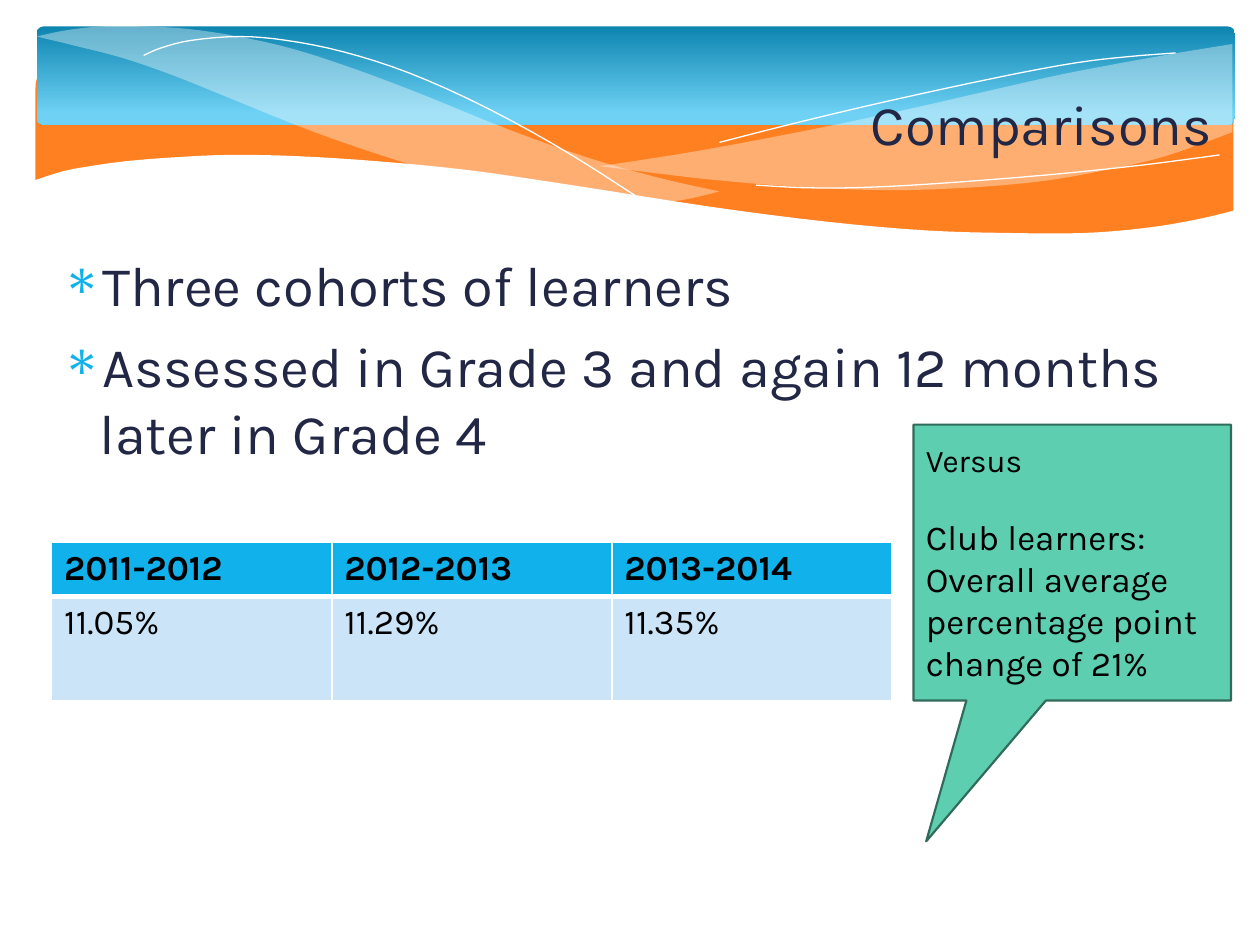
from dataclasses import dataclass
from typing import NamedTuple

from lxml import etree
from pptx import Presentation, util as u
from pptx.dml import color
from pptx.enum import shapes, text
from pptx.oxml import ns

Point = tuple[float, float]


@dataclass(frozen=True)
class Theme:
    font: str = "Karla"
    ink: str = "212745"
    black: str = "000000"
    white: str = "FFFFFF"
    orange: str = "FF8021"
    deep: str = "0D85B0"
    sky: str = "6FD2F5"
    blue: str = "11B2EB"
    pale: str = "CCE4F7"
    green: str = "5DCEAF"
    edge: str = "316B5B"
    large: int = 32
    mid: int = 20
    small: int = 18


class Box(NamedTuple):
    x: float
    y: float
    w: float
    h: float

    def emu(self) -> list[int]:
        return [u.Inches(n) for n in self]


class Wave(NamedTuple):
    curves: list[list[Point]]
    fill: bool = True
    alpha: int = 100


T = Theme()
ROUND = shapes.MSO_SHAPE.ROUNDED_RECTANGLE
WAVES = [
    Wave([[(9.78, .35), (9.35, .42), (8.9, .5), (8.43, .59), (7.94, .7),
           (7.06, .9), (6.23, 1.07), (5.47, 1.21), (4.76, 1.32)],
          [(4.76, 1.32), (5.24, 1.38), (5.68, 1.43), (6.29, 1.48), (7.03, 1.51),
           (7.68, 1.49), (8.26, 1.44), (8.78, 1.35), (9.25, 1.24), (9.78, 1.05)]],
         alpha=37),
    Wave([[(5.71, 1.52), (5.22, 1.41), (4.66, 1.25), (4.04, 1.03), (3.35, .75),
           (2.82, .55), (2.33, .39), (1.89, .29), (1.49, .23), (1.13, .21),
           (.81, .21), (.53, .24), (.29, .29)],
          [(.29, .29), (.62, .37), (.97, .46), (1.35, .59), (1.75, .75),
           (2.47, 1.04), (3.11, 1.26), (3.68, 1.43), (4.19, 1.54),
           (4.64, 1.6), (5.04, 1.61), (5.4, 1.59), (5.71, 1.52)]],
         alpha=37),
    Wave([[(1.14, .44), (1.28, .38), (1.52, .32), (1.9, .29), (2.27, .32),
           (2.72, .41), (3.25, .58), (3.87, .86), (4.57, 1.25), (5.37, 1.77)]],
         fill=False),
    Wave([[(5.71, 1.13), (6.3, .98), (7.06, .8), (7.94, .61), (8.53, .5),
           (8.95, .45), (9.33, .42)]], fill=False),
    Wave([[(9.88, 1.65), (9.51, 1.74), (9.09, 1.81), (8.6, 1.85), (8.03, 1.85),
           (7.36, 1.83), (6.56, 1.76), (5.63, 1.64), (4.54, 1.47), (3.71, 1.35),
           (2.99, 1.28), (2.36, 1.24), (1.82, 1.23), (1.37, 1.25), (1, 1.28),
           (.71, 1.32), (.5, 1.36), (.28, 1.43)],
          [(.28, 2.21), (9.88, 2.21)]]),
    Wave([[(9.68, 1.23), (9.07, 1.31), (8.3, 1.39), (7.4, 1.46), (6.8, 1.49),
           (6.37, 1.49), (6, 1.47)]], fill=False),
]


def rgb(code: str) -> color.RGBColor:
    return color.RGBColor.from_string(code)


def smooth(pts: list[Point], steps: int = 4) -> list[Point]:
    if len(pts) < 3:
        return pts
    ends = [pts[0], *pts, pts[-1]]
    out = []
    for a, b, c, d in zip(ends, ends[1:], ends[2:], ends[3:]):
        for i in range(steps):
            t = i / steps
            x, y = (
                (2 * q + (r - p) * t + (2 * p - 5 * q + 4 * r - s) * t ** 2
                 + (3 * q - p - 3 * r + s) * t ** 3) / 2
                for p, q, r, s in zip(a, b, c, d))
            out.append((x, y))
    return out + [pts[-1]]


def draw_wave(slide, wave: Wave) -> None:
    pts = [(u.Inches(x), u.Inches(y)) for curve in wave.curves for x, y in smooth(curve)]
    pen = slide.shapes.build_freeform(*pts[0], scale=1.0)
    pen.add_line_segments(pts[1:], close=wave.fill)
    shape = pen.convert_to_shape()
    shape.shadow.inherit = False
    if not wave.fill:
        shape.fill.background()
        shape.line.color.rgb = rgb(T.white)
        shape.line.width = u.Pt(0)
        return
    shape.fill.solid()
    shape.fill.fore_color.rgb = rgb(T.white)
    shape.line.fill.background()
    if wave.alpha < 100:
        tint = shape._element.spPr.find(ns.qn("a:solidFill"))[0]
        etree.SubElement(tint, ns.qn("a:alpha"), val=str(wave.alpha * 1000))


def add_shape(slide, kind, box: Box, fill: str, line: str):
    shape = slide.shapes.add_shape(kind, *box.emu())
    shape.shadow.inherit = False
    shape.fill.solid()
    shape.fill.fore_color.rgb = rgb(fill)
    shape.line.color.rgb = rgb(line)
    shape.line.width = u.Pt(1.25)
    return shape


def style(par, size: int, ink: str, bold: bool = False) -> None:
    for run in par.runs:
        run.font.name = T.font
        run.font.size = u.Pt(size)
        run.font.color.rgb = rgb(ink)
        run.font.bold = bold


def add_text(slide, box: Box, words: str):
    frame = slide.shapes.add_textbox(*box.emu()).text_frame
    frame.word_wrap = True
    frame.text = words
    for par in frame.paragraphs:
        style(par, T.large, T.ink)
    return frame


def add_bullet(par) -> None:
    props = par._p.get_or_add_pPr()
    props.set("marL", str(u.Inches(.3)))
    props.set("indent", str(-u.Inches(.3)))
    tint = etree.SubElement(props, ns.qn("a:buClr"))
    etree.SubElement(tint, ns.qn("a:srgbClr"), val=T.blue)
    etree.SubElement(props, ns.qn("a:buChar"), char="∗")


def set_edges(cell, base: float) -> None:
    props = cell._tc.get_or_add_tcPr()
    for i, (tag, width) in enumerate(dict(lnL=1, lnR=1, lnT=1, lnB=base).items()):
        edge = etree.Element(ns.qn("a:" + tag), w=str(u.Pt(width)))
        fill = etree.SubElement(edge, ns.qn("a:solidFill"))
        etree.SubElement(fill, ns.qn("a:srgbClr"), val=T.white)
        props.insert(i, edge)


def add_grid(slide, box: Box, rows: list[list[str]], highs: list[float]) -> None:
    grid = slide.shapes.add_table(len(rows), len(rows[0]), *box.emu()).table
    for r, row in enumerate(rows):
        grid.rows[r].height = u.Inches(highs[r])
        for c, words in enumerate(row):
            cell = grid.cell(r, c)
            cell.text = words
            style(cell.text_frame.paragraphs[0], T.mid, T.black, r == 0)
            cell.fill.solid()
            cell.fill.fore_color.rgb = rgb(T.pale if r else T.blue)
            set_edges(cell, 1 if r else 3)


def main() -> None:
    deck = Presentation()
    deck.slide_width, deck.slide_height = u.Inches(10), u.Inches(7.5)
    slide = deck.slides.add_slide(deck.slide_layouts[6])

    add_shape(slide, ROUND, Box(.29, .44, 9.49, 1.56), T.orange, T.orange)
    band = add_shape(slide, ROUND, Box(.29, .21, 9.51, .78), T.sky, T.sky)
    band.adjustments[0] = .07
    band.line.fill.background()
    band.fill.gradient()
    band.fill.gradient_angle = 270
    for stop, tint, place in zip(band.fill.gradient_stops, (T.deep, T.sky), (0, .9)):
        stop.color.rgb = rgb(tint)
        stop.position = place
    for wave in WAVES:
        draw_wave(slide, wave)

    body = add_text(slide, Box(.39, 1.94, 9.42, 5.29),
                    "Three cohorts of learners\n"
                    "Assessed in Grade 3 and again 12 months later in Grade 4")
    body.paragraphs[1].space_before = u.Pt(7.5)
    for par in body.paragraphs:
        add_bullet(par)
    title = add_text(slide, Box(1.14, .29, 8.58, 1.37), "Comparisons")
    title.vertical_anchor = text.MSO_ANCHOR.MIDDLE
    title.paragraphs[0].alignment = text.PP_ALIGN.RIGHT

    add_grid(slide, Box(.41, 4.3, 6.67, 1.24),
             [["2011-2012", "2012-2013", "2013-2014"],
              ["11.05%", "11.29%", "11.35%"]], [.41, .83])

    note = add_shape(slide, shapes.MSO_SHAPE.RECTANGULAR_CALLOUT,
                     Box(7.25, 3.37, 2.52, 2.19), T.green, T.edge)
    note.adjustments[0], note.adjustments[1] = -.46, 1.01
    frame = note.text_frame
    frame.text = ("Versus\nClub learners:\n"
                  "Overall average percentage point change of 21%")
    frame.vertical_anchor = text.MSO_ANCHOR.MIDDLE
    for par, size in zip(frame.paragraphs, (T.small, T.mid, T.mid)):
        par.alignment = text.PP_ALIGN.LEFT
        style(par, size, T.black)
    frame.paragraphs[1].space_before = u.Pt(21)
    deck.save("out.pptx")


if __name__ == "__main__":
    main()
